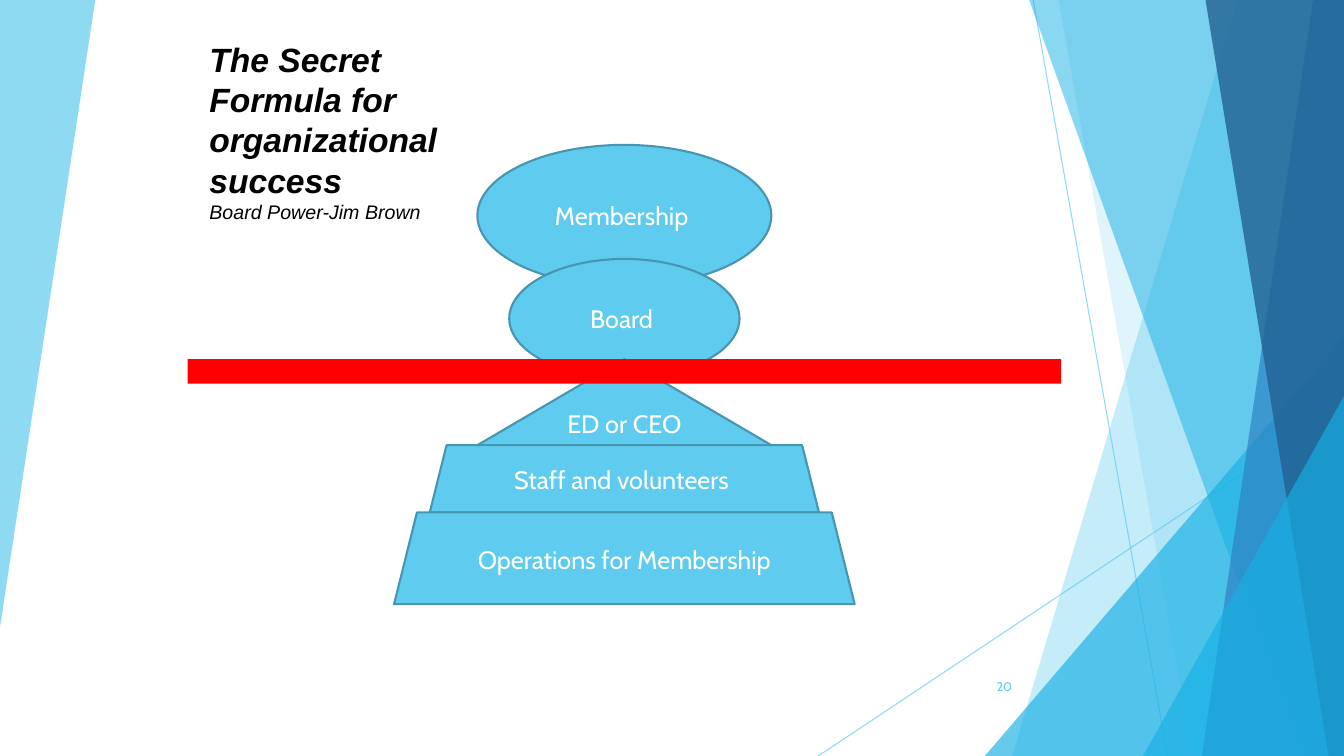
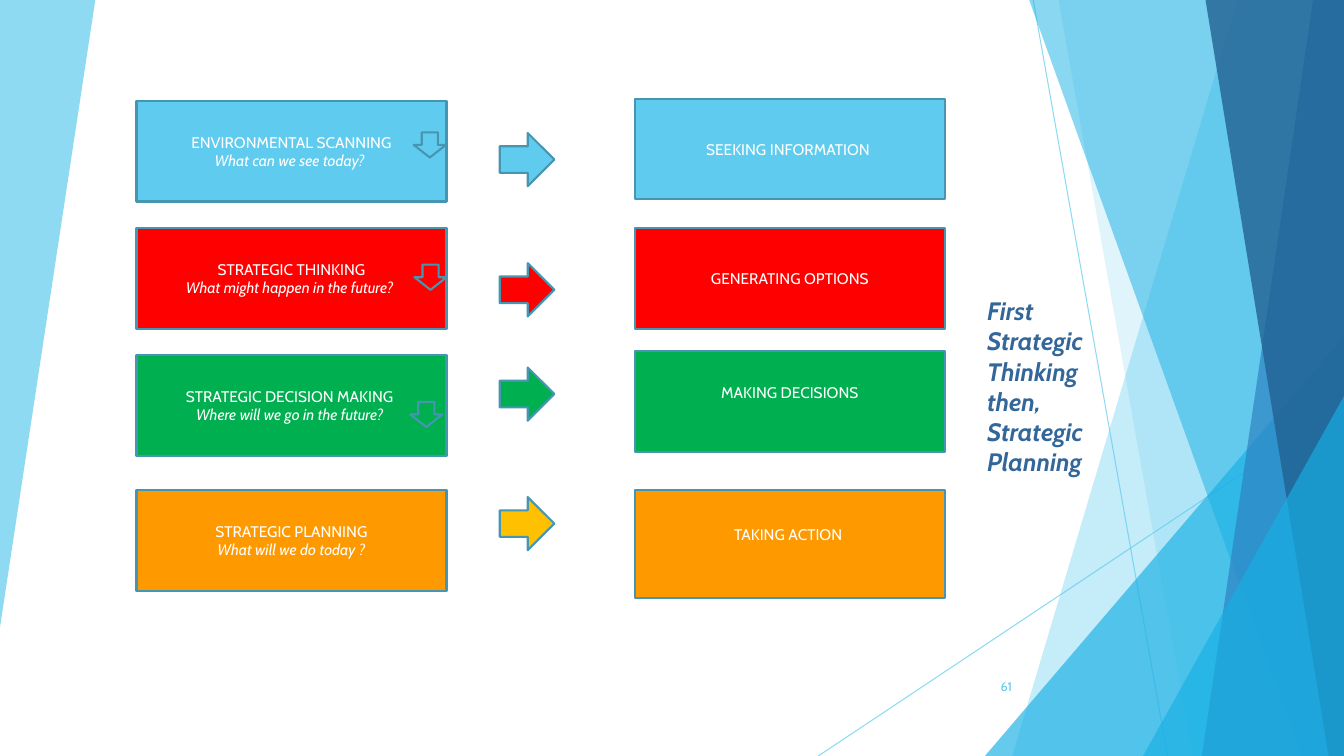
from pptx import Presentation
from pptx.dml.color import RGBColor
from pptx.enum import shapes, text
from pptx.oxml import xmlchemy as xml
from pptx.util import Pt

SKY = RGBColor(0x5F, 0xCB, 0xEF)
EDGE = RGBColor(0x46, 0x96, 0xB1)
AQUA = RGBColor(0x17, 0xB0, 0xE4)
BLUE = RGBColor(0x2E, 0x83, 0xC3)
NAVY = RGBColor(0x22, 0x62, 0x92)
SLATE = RGBColor(0x33, 0x66, 0x99)
RED = RGBColor(0xFF, 0, 0)
GREEN = RGBColor(0, 0xB0, 0x50)
AMBER = RGBColor(0xFF, 0x99, 0)
GOLD = RGBColor(0xFF, 0xC0, 0)
WHITE = RGBColor(0xFF, 0xFF, 0xFF)
BLACK = RGBColor(0, 0, 0)

WIDE, HIGH = 960, 540
FONT = "Cabin"
KIND = shapes.MSO_SHAPE
ALIGN = text.PP_ALIGN
MIDDLE = text.MSO_ANCHOR.MIDDLE

CORNER = [(0, 0), (68, -0.5), (68, 0.5), (0, 448)]
RAYS = [(738, 0, 834, HIGH), (WIDE, 290, 584.5, HIGH)]
WEDGES = [
    ("band", 884, 723, SKY, 36),
    ("band", 756, 852, SKY, 20),
    ("peak", 703.5, 240, AQUA, 66),
    ("band", 735, 929.5, AQUA, 50),
    ("band", 938, 858.5, BLUE, 70),
    ("band", 861, 949, NAVY, 80),
    ("peak", 816.5, 283, AQUA, 66),
]

CENTER = 446
TOWER = [
    (KIND.OVAL, 103.5, 210, 101, "Membership "),
    (KIND.OVAL, 185, 164.5, 85, "Board "),
    (KIND.ISOSCELES_TRIANGLE, 256.5, 210, 61.5, "ED or CEO"),
    (KIND.TRAPEZOID, 318, 278, 48, "Staff and volunteers "),
    (KIND.TRAPEZOID, 366, 329, 65.5, "Operations for Membership"),
]
TITLE = [("The Secret Formula for organizational success", 24, True, True),
         ("Board Power-Jim Brown", 14, False, True)]
MOTTO = [("First Strategic Thinking then,", 18, True, True),
         ("Strategic Planning", 18, True, True)]

LEFT, MID, RIGHT = 97.5, 357, 453.5
BOX_W, BOX_H = 221.5, 72
STEPS = [
    dict(fill=SKY, tip=SKY, top=72, far=70.5, mid=95, down=(298, 92),
         head="ENVIRONMENTAL SCANNING", ask="What can we see today? ",
         goal="SEEKING INFORMATION "),
    dict(fill=RED, tip=RED, top=163, far=163, mid=188, down=(298.5, 186.5),
         head="STRATEGIC THINKING", ask="What might happen in the future? ",
         goal="GENERATING OPTIONS"),
    dict(fill=GREEN, tip=GREEN, top=253.5, far=251, mid=262.5, down=(295.5, 284.5),
         head="STRATEGIC DECISION MAKING ", ask="Where will we go in the future? ",
         goal="MAKING DECISIONS", lift=17),
    dict(fill=AMBER, tip=GOLD, top=350, far=350, mid=355, tall=77,
         head="STRATEGIC PLANNING", ask="What will we do today ?",
         goal="TAKING ACTION ", lift=17),
]


def fade(part, alpha):
    for color in part._element.spPr.xpath(".//a:srgbClr"):
        node = xml.OxmlElement("a:alpha")
        node.set("val", str(alpha * 1000))
        color.append(node)


def paint(shape, fill, edge=None):
    shape.shadow.inherit = False
    shape.fill.solid()
    shape.fill.fore_color.rgb = fill
    if edge is None:
        shape.line.fill.background()
    else:
        shape.line.color.rgb = edge
        shape.line.width = Pt(1.5)
    return shape


def write(shape, lines, color, align, font=FONT):
    frame = shape.text_frame
    frame.word_wrap = True
    for i, (words, size, bold, slant) in enumerate(lines):
        para = frame.paragraphs[0] if i == 0 else frame.add_paragraph()
        para.alignment = align
        run = para.add_run()
        run.text = words
        run.font.name = font
        run.font.size = Pt(size)
        run.font.bold = bold
        run.font.italic = slant
        run.font.color.rgb = color
    return frame


def add(slide, kind, x, y, w, h, fill, edge=EDGE):
    shape = slide.shapes.add_shape(kind, Pt(x), Pt(y), Pt(w), Pt(h))
    return paint(shape, fill, edge)


def label(slide, x, y, w, h, lines, color, align=ALIGN.LEFT, font=FONT):
    box = slide.shapes.add_textbox(Pt(x), Pt(y), Pt(w), Pt(h))
    return write(box, lines, color, align, font)


def outline(slide, points, fill, alpha):
    spots = [(Pt(x), Pt(y)) for x, y in points]
    pen = slide.shapes.build_freeform(*spots[0], scale=1.0)
    pen.add_line_segments(spots[1:], close=True)
    fade(paint(pen.convert_to_shape(), fill), alpha)


def backdrop(slide):
    outline(slide, CORNER, SKY, 70)
    for ends in RAYS:
        ray = slide.shapes.add_connector(
            shapes.MSO_CONNECTOR.STRAIGHT, *[Pt(v) for v in ends])
        ray.line.color.rgb = SKY
        ray.line.width = Pt(0.75)
        ray._element.spPr.append(xml.OxmlElement("a:effectLst"))
        fade(ray, 70)
    for form, a, b, fill, alpha in WEDGES:
        if form == "band":
            outline(slide, [(a, -0.5), (WIDE, -0.5), (WIDE, HIGH), (b, HIGH)],
                    fill, alpha)
        else:
            peak = add(slide, KIND.ISOSCELES_TRIANGLE, a, b,
                       WIDE - a, HIGH - b, fill, None)
            peak.adjustments[0] = 1
            fade(peak, alpha)


def start(deck, number):
    slide = deck.slides.add_slide(deck.slide_layouts[6])
    backdrop(slide)
    frame = label(slide, 676, 476, 54, 28.5, [(number, 9, False, False)],
                  SKY, ALIGN.RIGHT)
    frame.vertical_anchor = MIDDLE
    return slide


def formula(deck):
    slide = start(deck, "20")
    for kind, y, w, h, words in TOWER:
        part = add(slide, kind, CENTER - w / 2, y, w, h, SKY)
        write(part, [(words, 18, False, False)], WHITE, ALIGN.CENTER)
    label(slide, 142.5, 24, 193, 140, TITLE, BLACK, font="Arial")
    add(slide, KIND.RECTANGLE, 134, 256.5, 624, 17.5, RED, None)


def steps(deck):
    slide = start(deck, "61")
    for step in STEPS:
        fill = step["fill"]
        near = add(slide, KIND.RECTANGLE, LEFT, step["top"], BOX_W, BOX_H, fill)
        write(near, [(step["head"], 11, False, False),
                     (step["ask"], 11, False, True)], WHITE, ALIGN.CENTER)
        far = add(slide, KIND.RECTANGLE, RIGHT, step["far"], BOX_W,
                  step.get("tall", BOX_H), fill)
        frame = write(far, [(step["goal"], 11, False, False)], WHITE, ALIGN.CENTER)
        frame.margin_bottom = Pt(step.get("lift", 3.6))
        add(slide, KIND.RIGHT_ARROW, MID, step["mid"], 39, 38, step["tip"])
        if "down" in step:
            down = add(slide, KIND.RIGHT_ARROW, *step["down"], 18, 23, fill)
            down.rotation = 90
    label(slide, 698, 207.5, 102.5, 138, MOTTO, SLATE)


def main():
    deck = Presentation()
    deck.slide_width, deck.slide_height = Pt(WIDE), Pt(HIGH)
    formula(deck)
    steps(deck)
    deck.save("out.pptx")


if __name__ == "__main__":
    main()
